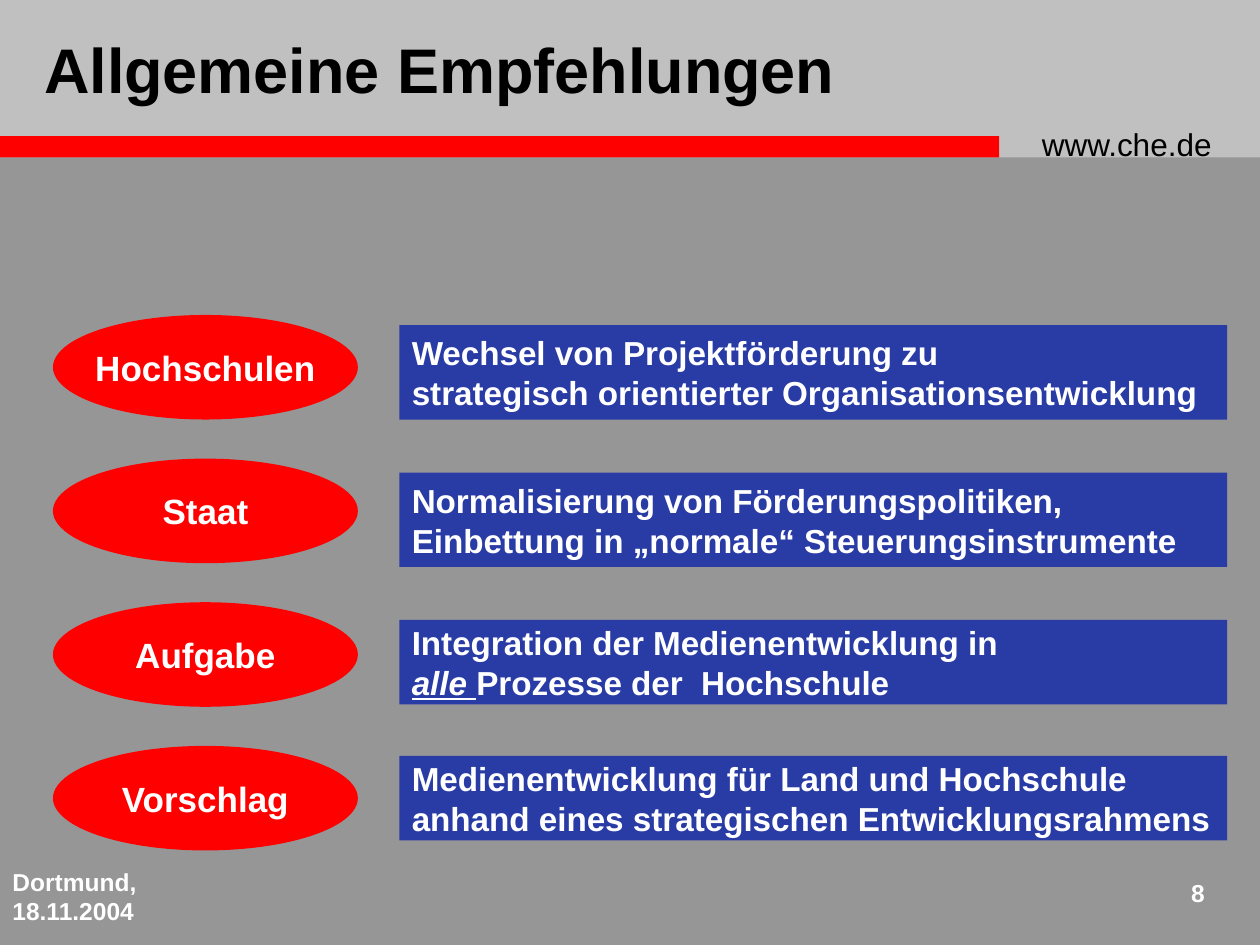
from pptx import Presentation
from pptx import util as u
from pptx.dml.color import RGBColor
from pptx.enum import shapes, text

COLOURS = {"ground": "969696", "header": "C0C0C0", "red": "FF0000",
           "blue": "293BA5", "white": "FFFFFF", "black": "000000"}
FONT = "Arial"

TITLE = "Allgemeine Empfehlungen"
ADDRESS = "www.che.de"
PLACE_DATE = "Dortmund, 18.11.2004"
PAGE_NUMBER = "8"

# Label, lines of text, top and height of the text bar
ROWS = [
    ("Hochschulen", ["Wechsel von Projektförderung zu",
                     "strategisch orientierter Organisationsentwicklung"], 2.58, 0.75),
    ("Staat", ["Normalisierung von Förderungspolitiken,",
               "Einbettung in „normale“ Steuerungsinstrumente"], 3.75, 0.75),
    ("Aufgabe", ["Integration der Medienentwicklung in",
                 "Prozesse der  Hochschule"], 4.92, 0.67),
    ("Vorschlag", ["Medienentwicklung für Land und Hochschule",
                   "anhand eines strategischen Entwicklungsrahmens"], 6, 0.67),
]
EMPHASIS = {"Prozesse der  Hochschule": "alle "}

WIDTH, HEIGHT = 10, 7.5
HEADER_HEIGHT, STRIPE_HEIGHT = 1.25, 0.17
OVAL_LEFT, OVAL_TOP, OVAL_WIDTH, OVAL_HEIGHT, OVAL_STEP = 0.42, 2.5, 2.42, 0.83, 1.14
BAR_LEFT, BAR_WIDTH = 3.17, 6.57


def colour(name):
    return RGBColor.from_string(COLOURS[name])


def inches(*lengths):
    return [u.Inches(length) for length in lengths]


def add_block(page, kind, fill, *place):
    block = page.shapes.add_shape(kind, *inches(*place))
    block.shadow.inherit = False
    block.fill.solid()
    block.fill.fore_color.rgb = colour(fill)
    block.line.fill.background()
    return block


def write(box, lines, size, ink="white", bold=True, align=text.PP_ALIGN.LEFT,
          anchor=text.MSO_ANCHOR.MIDDLE, wrap=False):
    frame = box.text_frame
    frame.word_wrap = wrap
    frame.vertical_anchor = anchor
    for index, line in enumerate(lines):
        para = frame.paragraphs[0] if index == 0 else frame.add_paragraph()
        para.alignment = align
        para.font.name = FONT
        para.font.size = u.Pt(size)
        para.font.bold = bold
        para.font.color.rgb = colour(ink)
        if line in EMPHASIS:
            span = para.add_run()
            span.text = EMPHASIS[line]
            span.font.italic = span.font.underline = True
        para.add_run().text = line


def add_note(page, line, size, place, **style):
    box = page.shapes.add_textbox(*inches(*place))
    write(box, [line], size, anchor=text.MSO_ANCHOR.TOP, wrap=True, **style)


def add_header(page):
    rectangle = shapes.MSO_SHAPE.RECTANGLE
    add_block(page, rectangle, "header", 0, 0, WIDTH, HEADER_HEIGHT)
    add_block(page, rectangle, "red", 0, HEADER_HEIGHT - STRIPE_HEIGHT, 7.93, STRIPE_HEIGHT)
    add_note(page, ADDRESS, 18, (8.17, 0.94, 1.75, 0.4), ink="black", bold=False)
    title = page.shapes.title
    title.left, title.top, title.width, title.height = inches(0.25, 0.17, 7.75, 0.75)
    write(title, [TITLE], 36, ink="black", wrap=True)
    page.shapes._spTree.append(title._element)  # in front of the header band


def add_rows(page):
    for index, (label, lines, top, height) in enumerate(ROWS):
        bar = add_block(page, shapes.MSO_SHAPE.RECTANGLE, "blue",
                        BAR_LEFT, top, BAR_WIDTH, height)
        write(bar, lines, 19)
        oval = add_block(page, shapes.MSO_SHAPE.OVAL, "red", OVAL_LEFT,
                         OVAL_TOP + index * OVAL_STEP, OVAL_WIDTH, OVAL_HEIGHT)
        write(oval, [label], 20, align=text.PP_ALIGN.CENTER)


def main():
    deck = Presentation()
    deck.slide_width, deck.slide_height = inches(WIDTH, HEIGHT)
    page = deck.slides.add_slide(deck.slide_layouts.get_by_name("Title Only"))
    page.background.fill.solid()
    page.background.fill.fore_color.rgb = colour("ground")
    add_header(page)
    add_rows(page)
    add_note(page, PLACE_DATE, 14, (0, 6.83, 2.08, 0.5))
    add_note(page, PAGE_NUMBER, 14, (9.08, 6.92, 0.58, 0.42), align=text.PP_ALIGN.RIGHT)
    deck.save("out.pptx")


if __name__ == "__main__":
    main()
